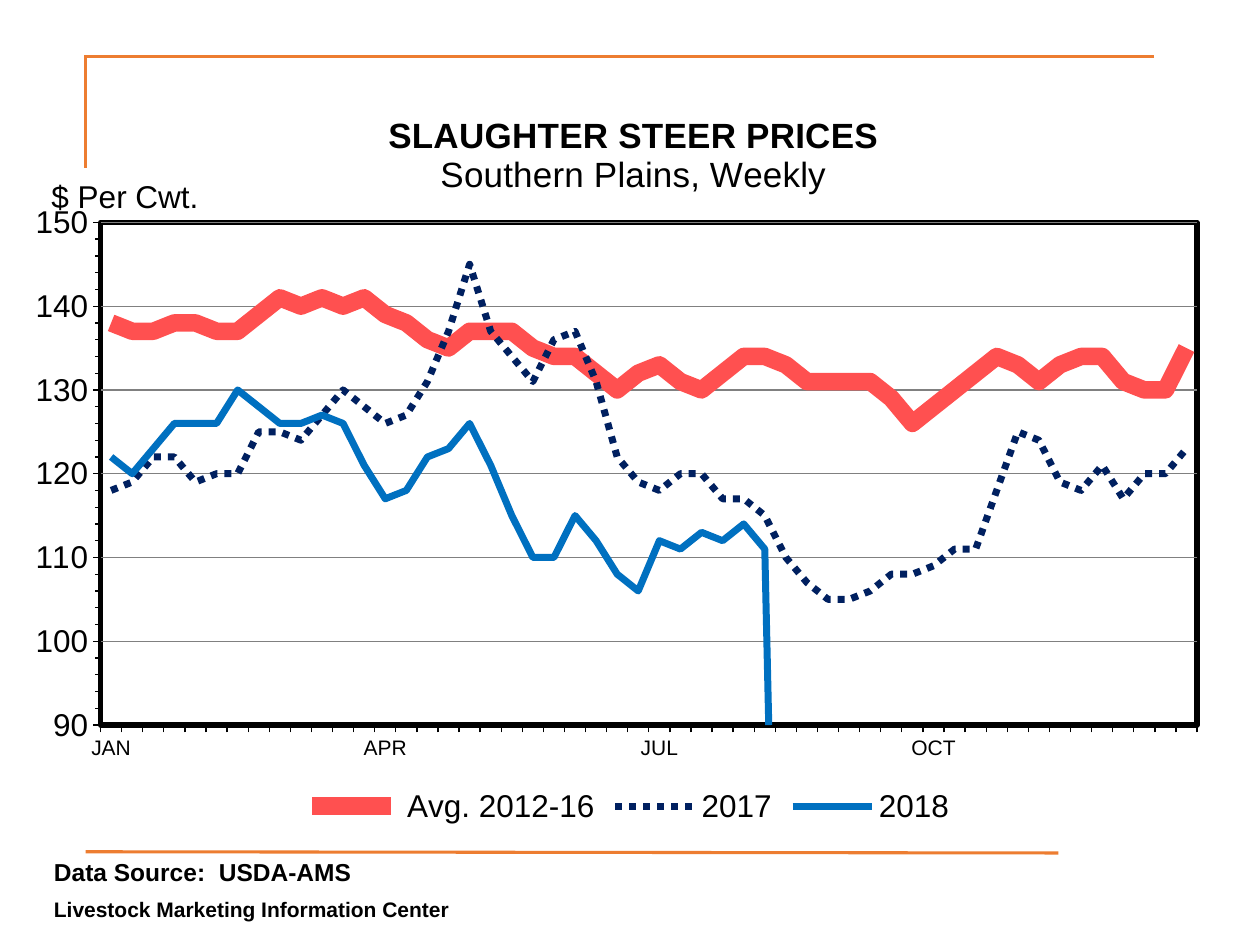
from lxml import etree
from pptx import Presentation, util as u
from pptx.chart.data import CategoryChartData
from pptx.dml.color import RGBColor
from pptx.enum import chart as ch, dml, shapes
from pptx.oxml import parse_xml
from pptx.oxml.ns import nsdecls, qn

THEME = {
    "font": "Arial", "ink": "000000", "paper": "FFFFFF", "accent": "ED7D31", "grid": "808080",
    "title": 20, "body": 18, "months": 12, "source": 14, "center": 12,
}
RULES = [((0.68, 1.33), (0.68, 0.44)), ((9.16, 0.45), (0.67, 0.45)), ((8.4, 6.77), (0.68, 6.76))]
TITLE = [("SLAUGHTER STEER PRICES", True), ("Southern Plains, Weekly", False)]
UNIT = "$ Per Cwt."
FOOTER = [("Data Source:  USDA-AMS", THEME["source"], 0),
          ("Livestock Marketing Information Center", THEME["center"], 6)]
WEEKS = 52
MONTHS = {0: "JAN", 13: "APR", 26: "JUL", 39: "OCT"}
# name, colour, width in points, dash, weekly prices
SERIES = [
    (" Avg. 2012-16", "FF5050", 10, None,
     [138, 137, 137, 138, 138, 137, 137, 139, 141, 140, 141, 140, 141,
      139, 138, 136, 135, 137, 137, 137, 135, 134, 134, 132, 130, 132,
      133, 131, 130, 132, 134, 134, 133, 131, 131, 131, 131, 129, 126,
      128, 130, 132, 134, 133, 131, 133, 134, 134, 131, 130, 130, 135]),
    ("2017", "002060", 4, dml.MSO_LINE.ROUND_DOT,
     [118, 119, 122, 122, 119, 120, 120, 125, 125, 124, 127, 130, 128,
      126, 127, 131, 137, 145, 137, 134, 131, 136, 137, 131, 122, 119,
      118, 120, 120, 117, 117, 115, 110, 107, 105, 105, 106, 108, 108,
      109, 111, 111, 118, 125, 124, 119, 118, 121, 117, 120, 120, 123]),
    ("2018", "0070C0", 4, None,
     [122, 120, 123, 126, 126, 126, 130, 128, 126, 126, 127, 126, 121,
      117, 118, 122, 123, 126, 121, 115, 110, 110, 115, 112, 108, 106,
      112, 111, 113, 112, 114, 111]),
]


def color(name):
    return RGBColor.from_string(THEME.get(name, name))


def style_line(line, name, width):
    line.color.rgb = color(name)
    line.width = u.Pt(width)


def style_font(font, size, bold=False):
    font.name, font.size, font.bold = THEME["font"], u.Pt(size), bold
    font.color.rgb = color("ink")


def add_rule(slide, start, end):
    rule = slide.shapes.add_connector(shapes.MSO_CONNECTOR.STRAIGHT,
                                      *(u.Inches(n) for n in start + end))
    style_line(rule.line, "accent", 1.75)
    etree.SubElement(rule._element.spPr, qn("a:effectLst"))


def place(element, index, x, y, size=None):
    """Give a chart part a manual layout in fractions of the chart."""
    for old in element.findall(qn("c:layout")):
        element.remove(old)
    values = [("xMode", "edge"), ("yMode", "edge"), ("x", x), ("y", y)]
    if size:
        values = [("layoutTarget", "inner")] + values + [("w", size[0]), ("h", size[1])]
    parts = "".join(f'<c:{tag} val="{value}"/>' for tag, value in values)
    element.insert(index, parse_xml(
        f'<c:layout {nsdecls("c")}><c:manualLayout>{parts}</c:manualLayout></c:layout>'))


def add_title(title, lines, size, x, y):
    frame = title.text_frame
    for number, (words, bold) in enumerate(lines):
        paragraph = frame.add_paragraph() if number else frame.paragraphs[0]
        run = paragraph.add_run()
        run.text = words
        style_font(run.font, size, bold)
    body = frame._txBody.bodyPr
    body.set("rot", "0")
    body.set("vert", "horz")
    place(title._element, 1, x, y)


def style_axes(chart):
    value_axis, week_axis = chart.value_axis, chart.category_axis
    value_axis.minimum_scale, value_axis.maximum_scale = 90, 150
    value_axis.major_unit, value_axis.minor_unit = 10, 2
    value_axis.minor_tick_mark = ch.XL_TICK_MARK.OUTSIDE
    style_line(value_axis.major_gridlines.format.line, "grid", 0.75)
    for axis, size in ((value_axis, THEME["body"]), (week_axis, THEME["months"])):
        axis.major_tick_mark = ch.XL_TICK_MARK.OUTSIDE
        style_line(axis.format.line, "ink", 0.75)
        style_font(axis.tick_labels.font, size)
    skip = parse_xml(f'<c:tickLblSkip {nsdecls("c")} val="1"/>')
    week_axis._element.find(qn("c:noMultiLvlLbl")).addprevious(skip)
    add_title(value_axis.axis_title, [(UNIT, False)], THEME["body"], 0.02, 0.115)


def style_plot(chart):
    area = chart._chartSpace.chart.plotArea
    place(area, 0, 0.065, 0.185, (0.9, 0.674))
    area.append(parse_xml(
        f'<c:spPr {nsdecls("c", "a")}>'
        f'<a:solidFill><a:srgbClr val="{THEME["paper"]}"/></a:solidFill>'
        f'<a:ln w="{u.Pt(3)}"><a:solidFill><a:srgbClr val="{THEME["ink"]}"/></a:solidFill></a:ln>'
        '</c:spPr>'))
    # Weeks without a price fall to zero.
    chart._chartSpace.chart.find(qn("c:dispBlanksAs")).set("val", "zero")
    for series, (_, line_color, width, dash, _) in zip(chart.plots[0].series, SERIES):
        series.smooth = False
        series.marker.style = ch.XL_MARKER_STYLE.NONE
        style_line(series.format.line, line_color, width)
        if dash:
            series.format.line.dash_style = dash


def add_price_chart(slide):
    data = CategoryChartData()
    data.categories = [MONTHS.get(week, "") for week in range(WEEKS)]
    for name, _, _, _, prices in SERIES:
        data.add_series(name, prices + [None] * (WEEKS - len(prices)))
    box = (u.Inches(n) for n in (0.17, 0.67, 9.67, 5.92))
    chart = slide.shapes.add_chart(ch.XL_CHART_TYPE.LINE, *box, data).chart
    style_font(chart.font, THEME["body"])
    chart.plots[0].vary_by_categories = False
    chart.has_title = chart.has_legend = True
    add_title(chart.chart_title, TITLE, THEME["title"], 0.298, 0.035)
    chart.legend.position = ch.XL_LEGEND_POSITION.BOTTOM
    chart.legend.include_in_layout = False
    style_font(chart.legend.font, THEME["body"])
    style_axes(chart)
    style_plot(chart)


def add_footer(slide):
    frame = slide.shapes.add_textbox(*(u.Inches(n) for n in (0.33, 6.75, 4.5, 0.64))).text_frame
    frame.word_wrap = True
    for number, (words, size, space) in enumerate(FOOTER):
        paragraph = frame.add_paragraph() if number else frame.paragraphs[0]
        paragraph.space_before = u.Pt(space)
        run = paragraph.add_run()
        run.text = words
        style_font(run.font, size, True)


def main():
    presentation = Presentation()
    presentation.slide_width, presentation.slide_height = u.Inches(10), u.Inches(7.5)
    slide = presentation.slides.add_slide(presentation.slide_layouts[6])
    for start, end in RULES:
        add_rule(slide, start, end)
    add_price_chart(slide)
    add_footer(slide)
    presentation.save("out.pptx")


if __name__ == "__main__":
    main()
